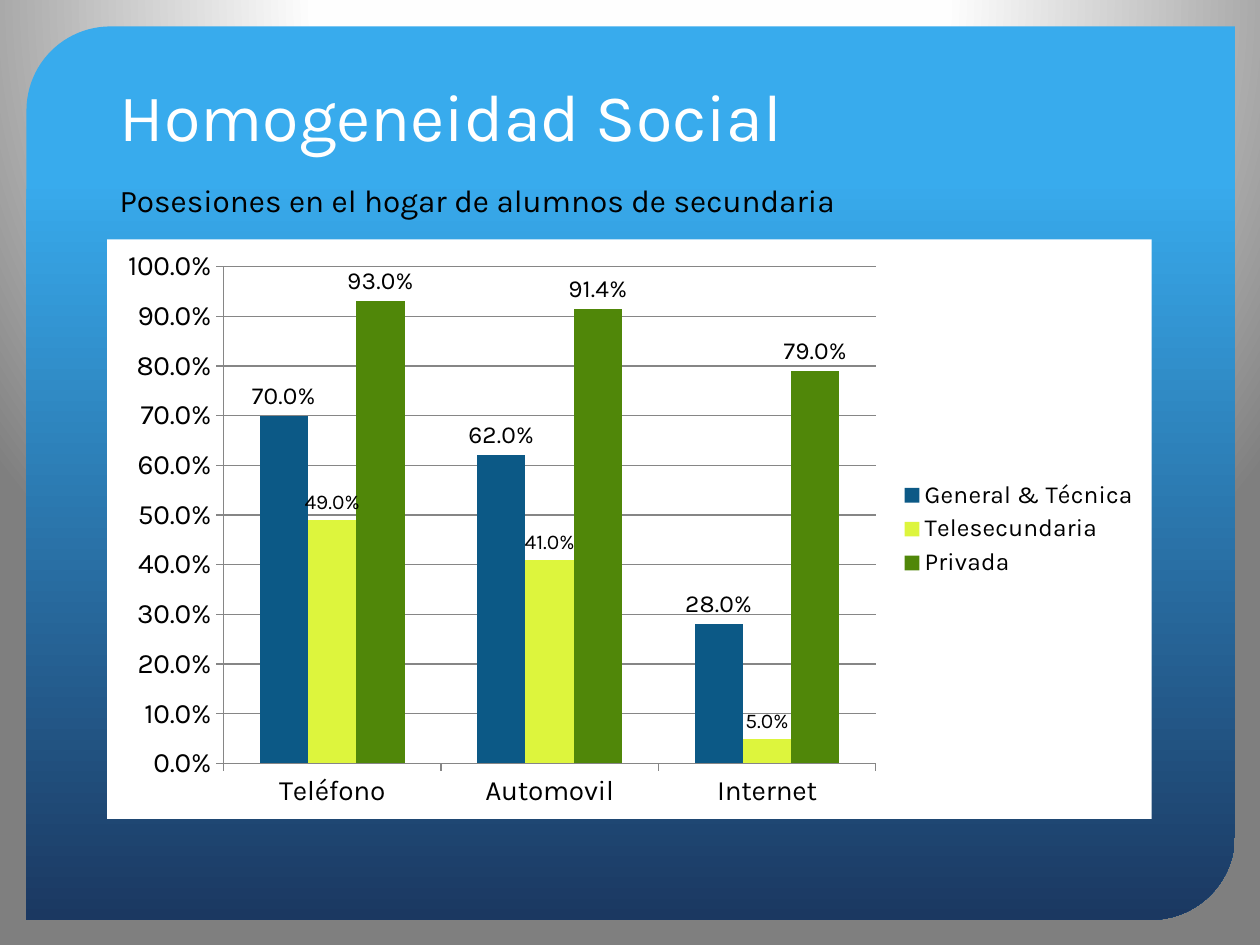
from copy import deepcopy

from pptx import Presentation
from pptx.chart import data as chart_data
from pptx.dml.color import RGBColor
from pptx.enum import chart as chart_enum, shapes, text
from pptx.oxml import ns, parse_xml
from pptx.util import Inches, Pt

FONT = "Karla"
WHITE = RGBColor(0xFF, 0xFF, 0xFF)
NEAR_WHITE = RGBColor(0xFE, 0xFE, 0xFE)
GRAY = RGBColor(0x7F, 0x7F, 0x7F)
GRID = RGBColor(0x86, 0x86, 0x86)
BLACK = RGBColor(0, 0, 0)
SKY = RGBColor(0x38, 0xAB, 0xED)
NAVY = RGBColor(0x1B, 0x38, 0x61)
BLUE = RGBColor(0x0C, 0x59, 0x86)
LIME = RGBColor(0xDD, 0xF5, 0x3D)
GREEN = RGBColor(0x50, 0x87, 0x09)

LEFT, WIDTH = Inches(0.85), Inches(8.29)
CATEGORIES = ["Teléfono", "Automovil", "Internet"]
# name, values, color, label size
SERIES = [
    ("General & Técnica", (0.7, 0.62, 0.28), BLUE, 14),
    ("Telesecundaria", (0.49, 0.41, 0.05), LIME, 12),
    ("Privada", (0.93, 0.914, 0.79), GREEN, 14),
]
PERCENT = "0.0%"


def set_font(font, size, color):
    font.name = FONT
    font.size = Pt(size)
    font.color.rgb = color


def set_stops(fill, stops):
    for stop, (position, color) in zip(fill.gradient_stops, stops):
        stop.position = position
        stop.color.rgb = color


def add_background(slide):
    """Radial gradient centred above the slide."""
    fill = slide.background.fill
    fill.gradient()
    gradient = slide.element.find(".//" + ns.qn("a:gradFill"))
    stop_list = gradient.find(ns.qn("a:gsLst"))
    stop_list.append(deepcopy(stop_list[0]))
    set_stops(fill, [(0, WHITE), (0.4, NEAR_WHITE), (1, GRAY)])
    gradient.replace(gradient.find(ns.qn("a:lin")), parse_xml(
        f'<a:path {ns.nsdecls("a")} path="circle">'
        '<a:fillToRect l="50000" t="-80000" r="50000" b="180000"/></a:path>'))


def add_panel(slide):
    panel = slide.shapes.add_shape(
        shapes.MSO_SHAPE.ROUND_2_DIAG_RECTANGLE,
        Inches(0.21), Inches(0.21), Inches(9.59), Inches(7.09))
    panel.adjustments[0] = 0.094
    panel.shadow.inherit = False
    panel.line.fill.background()
    panel.fill.gradient()
    panel.fill.gradient_angle = 270
    set_stops(panel.fill, [(0.17, SKY), (1, NAVY)])
    # Send behind the title placeholder
    slide.shapes.element.insert(2, panel.element)


def write_line(shape, wording, size, color, anchor):
    frame = shape.text_frame
    frame.word_wrap = True
    frame.vertical_anchor = anchor
    paragraph = frame.paragraphs[0]
    paragraph.text = wording
    paragraph.alignment = text.PP_ALIGN.LEFT
    set_font(paragraph.font, size, color)


def add_title(slide):
    title = slide.shapes.title
    title.left, title.top = LEFT, Inches(0.42)
    title.width, title.height = WIDTH, Inches(0.86)
    write_line(title, "Homogeneidad Social", 38, WHITE, text.MSO_ANCHOR.BOTTOM)


def add_subtitle(slide):
    box = slide.shapes.add_textbox(LEFT, Inches(1.39), WIDTH, Inches(0.4))
    write_line(box, "Posesiones en el hogar de alumnos de secundaria",
               18, BLACK, text.MSO_ANCHOR.TOP)
    box.text_frame.auto_size = text.MSO_AUTO_SIZE.SHAPE_TO_FIT_TEXT


def format_axis(axis):
    axis.major_tick_mark = chart_enum.XL_TICK_MARK.OUTSIDE
    axis.minor_tick_mark = chart_enum.XL_TICK_MARK.NONE
    axis.format.line.color.rgb = GRID
    set_font(axis.tick_labels.font, 16, BLACK)


def format_series(series, color, label_size):
    series.format.fill.solid()
    series.format.fill.fore_color.rgb = color
    series.invert_if_negative = False
    labels = series.data_labels
    labels.show_value = True
    labels.number_format = PERCENT
    labels.number_format_is_linked = False
    labels.position = chart_enum.XL_LABEL_POSITION.OUTSIDE_END
    set_font(labels.font, label_size, BLACK)


def fill_chart_area(chart, color):
    chart.element.find(ns.qn("c:chart")).addnext(parse_xml(
        f'<c:spPr {ns.nsdecls("c", "a")}><a:solidFill><a:srgbClr val="{color}"/>'
        '</a:solidFill><a:ln><a:noFill/></a:ln></c:spPr>'))


def add_possessions_chart(slide):
    data = chart_data.CategoryChartData(number_format=PERCENT)
    data.categories = CATEGORIES
    for name, values, _, _ in SERIES:
        data.add_series(name, values)
    chart = slide.shapes.add_chart(
        chart_enum.XL_CHART_TYPE.COLUMN_CLUSTERED,
        LEFT, Inches(1.9), WIDTH, Inches(4.6), data).chart
    chart.has_title = False
    set_font(chart.font, 10, BLACK)
    fill_chart_area(chart, WHITE)

    chart.has_legend = True
    chart.legend.position = chart_enum.XL_LEGEND_POSITION.RIGHT
    chart.legend.include_in_layout = False
    set_font(chart.legend.font, 14, BLACK)

    value_axis = chart.value_axis
    format_axis(chart.category_axis)
    format_axis(value_axis)
    value_axis.minimum_scale, value_axis.maximum_scale = 0, 1
    value_axis.major_unit = 0.1
    value_axis.tick_labels.number_format = PERCENT
    value_axis.tick_labels.number_format_is_linked = False
    value_axis.has_major_gridlines = True
    value_axis.major_gridlines.format.line.color.rgb = GRID

    plot = chart.plots[0]
    plot.gap_width = 150
    plot.vary_by_categories = False
    for series, (_, _, color, label_size) in zip(plot.series, SERIES):
        format_series(series, color, label_size)


def main():
    presentation = Presentation()
    presentation.slide_width = Inches(10)
    presentation.slide_height = Inches(7.5)
    slide = presentation.slides.add_slide(presentation.slide_layouts[5])
    add_background(slide)
    add_panel(slide)
    add_title(slide)
    add_possessions_chart(slide)
    add_subtitle(slide)
    presentation.save("out.pptx")


if __name__ == "__main__":
    main()
